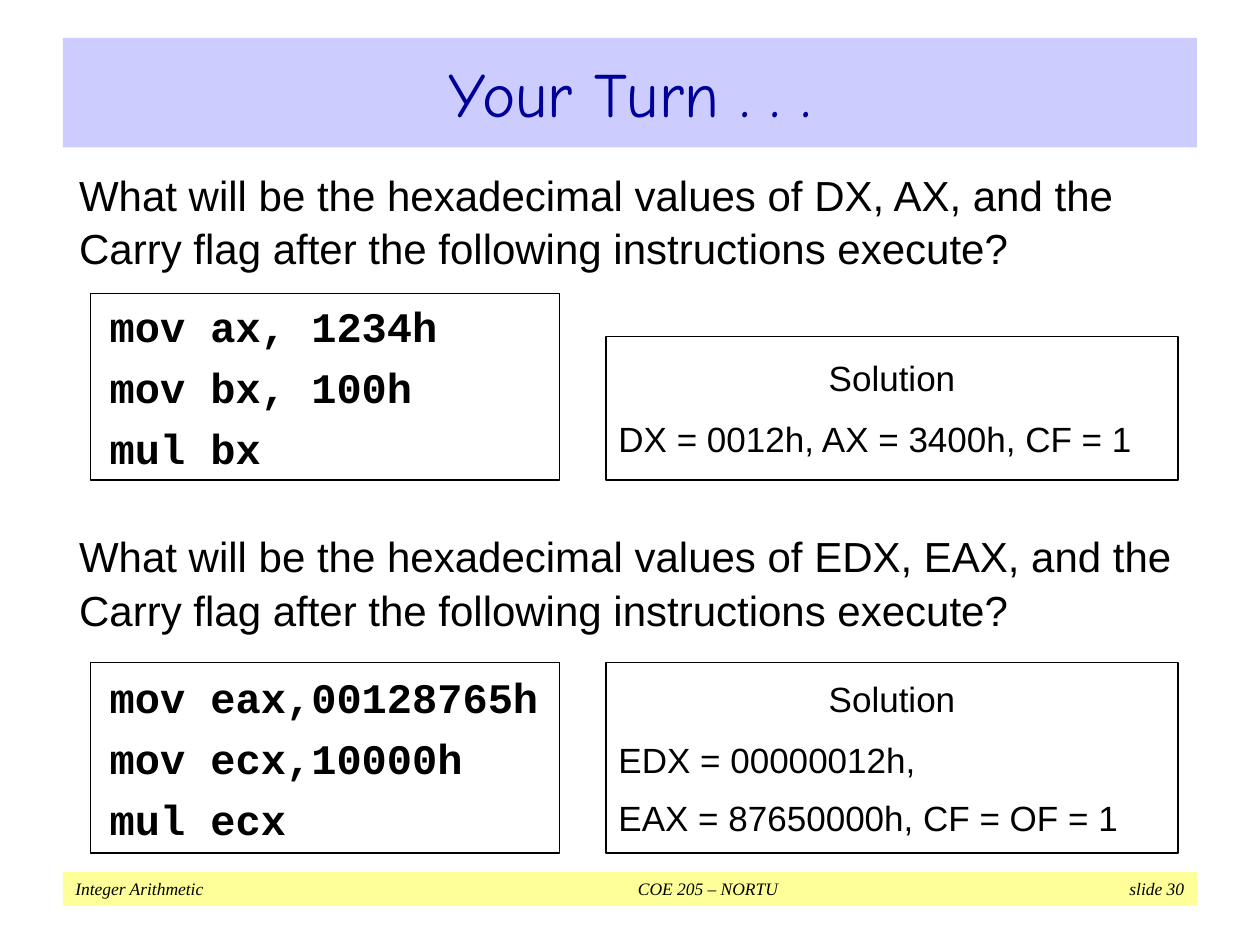
from pptx import Presentation
from pptx.dml.color import RGBColor
from pptx.enum.shapes import MSO_SHAPE as Shape
from pptx.enum.text import MSO_ANCHOR as Anchor, PP_ALIGN as Align
from pptx.util import Inches, Pt
from lxml.etree import SubElement

COLORS = {"black": "000000", "navy": "000099", "lavender": "CCCCFF", "yellow": "FFFF99"}
STYLES = {
    "title": {"name": "Comic Neue", "size": Pt(36), "color": "navy"},
    "question": {"name": "Arial", "size": Pt(24)},
    "code": {"name": "Courier New", "size": Pt(24), "bold": True},
    "solution": {"name": "Arial", "size": Pt(20)},
    "footer": {"name": "Times New Roman", "size": Pt(10), "italic": True},
}
EXERCISES = [
    {
        "question": "What will be the hexadecimal values of DX, AX, and the "
                    "Carry flag after the following instructions execute?",
        "code": ["mov ax, 1234h", "mov bx, 100h", "mul bx"],
        "solution": ["DX = 0012h, AX = 3400h, CF = 1"],
        "question_top": 1.17, "code_top": 2.33, "solution_top": 2.67, "bottom": 3.81,
    },
    {
        "question": "What will be the hexadecimal values of EDX, EAX, and the "
                    "Carry flag after the following instructions execute?",
        "code": ["mov eax,00128765h", "mov ecx,10000h", "mul ecx"],
        "solution": ["EDX = 00000012h,", "EAX = 87650000h, CF = OF = 1"],
        "question_top": 4.04, "code_top": 5.26, "solution_top": 5.26, "bottom": 6.77,
    },
]


def rgb(color):
    """Return the named colour."""
    return RGBColor.from_string(COLORS[color])


def write(shape, lines, style, gaps=(), inset=(0.1, 0.05), anchor=Anchor.MIDDLE):
    """Fill a shape with styled lines, spaced by the gaps between them."""
    frame = shape.text_frame
    margin_x, margin_y = map(Inches, inset)
    layout = {"word_wrap": True, "vertical_anchor": anchor,
              "margin_left": margin_x, "margin_right": margin_x,
              "margin_top": margin_y, "margin_bottom": margin_y}
    for attribute, value in layout.items():
        setattr(frame, attribute, value)
    frame.text = "\n".join(lines)
    for paragraph in frame.paragraphs:
        paragraph.alignment = Align.LEFT
        for run in paragraph.runs:
            for attribute, value in STYLES[style].items():
                if attribute != "color":
                    setattr(run.font, attribute, value)
            run.font.color.rgb = rgb(STYLES[style].get("color", "black"))
    for paragraph, gap in zip(frame.paragraphs[1:], gaps):
        paragraph.space_before = Pt(gap)
    return frame.paragraphs


def add_box(slide, left, top, width, height, fill=None):
    """Add a filled bar, or an outlined box when no fill is given."""
    box = slide.shapes.add_shape(
        Shape.RECTANGLE, Inches(left), Inches(top), Inches(width), Inches(height))
    box.shadow.inherit = False
    if fill:
        box.fill.solid()
        box.fill.fore_color.rgb = rgb(fill)
        box.line.fill.background()
    else:
        box.fill.background()
        box.line.color.rgb = rgb("black")
        box.line.width = Pt(0.75)
    return box


def add_title(slide, title):
    """Add the title bar."""
    bar = add_box(slide, 0.5, 0.3, 9, 0.87, "lavender")
    write(bar, [title], "title")[0].alignment = Align.CENTER


def add_footer(slide, parts):
    """Add the footer bar with its parts at tab stops."""
    bar = add_box(slide, 0.5, 6.92, 9, 0.27, "yellow")
    paragraph = write(bar, ["\t".join(parts)], "footer")[0]
    properties = paragraph._p.get_or_add_pPr()
    tabs = SubElement(properties, properties.tag.replace("pPr", "tabLst"))
    for position, alignment in ((5.02, "ctr"), (8.8, "r")):
        SubElement(tabs, tabs.tag.replace("tabLst", "tab"),
                   pos=str(Inches(position)), algn=alignment)


def add_exercise(slide, exercise):
    """Add a question with its code box and solution box."""
    question = slide.shapes.add_textbox(
        Inches(0.53), Inches(exercise["question_top"]), Inches(8.94), Inches(1.1))
    wording = write(question, [exercise["question"]], "question",
                    inset=(0.1, 0.15), anchor=Anchor.TOP)
    wording[0].line_spacing = 1.06

    code_top, solution_top = exercise["code_top"], exercise["solution_top"]
    code = add_box(slide, 0.72, code_top, 3.72, exercise["bottom"] - code_top)
    write(code, exercise["code"], "code", gaps=(6, 6), inset=(0.15, 0))

    solution = add_box(slide, 4.81, solution_top, 4.54, exercise["bottom"] - solution_top)
    answer = write(solution, ["Solution", *exercise["solution"]], "solution",
                   gaps=(11, 9), inset=(0.1, 0))
    answer[0].alignment = Align.CENTER


def main():
    """Build and save the slide."""
    deck = Presentation()
    deck.slide_width, deck.slide_height = Inches(10), Inches(7.5)
    slide = deck.slides.add_slide(deck.slide_layouts[6])
    add_footer(slide, ["Integer Arithmetic", "COE 205 – NORTU", "slide 30"])
    add_title(slide, "Your Turn . . .")
    for exercise in EXERCISES:
        add_exercise(slide, exercise)
    deck.save("out.pptx")


if __name__ == "__main__":
    main()
